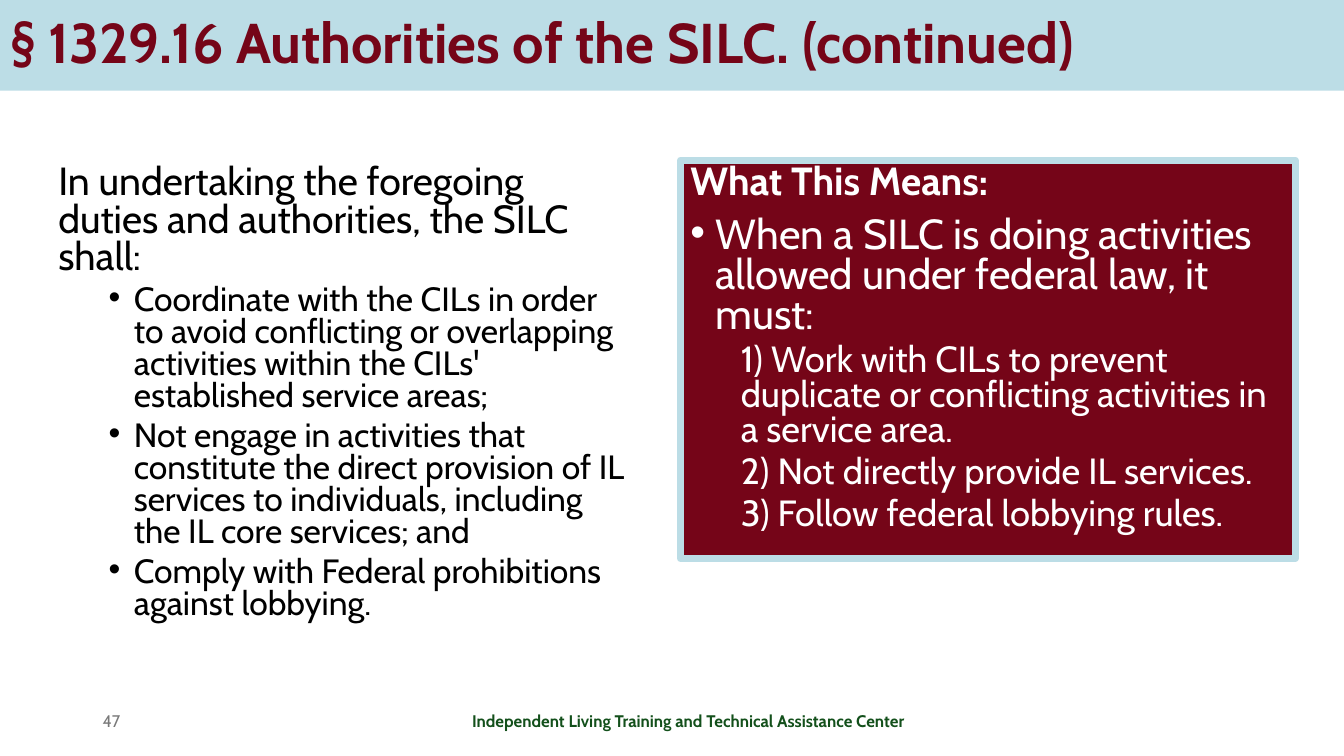
from dataclasses import dataclass

from lxml.etree import SubElement
from pptx import Presentation
from pptx.dml.color import RGBColor
from pptx.enum.shapes import MSO_SHAPE
from pptx.enum.text import MSO_ANCHOR, MSO_AUTO_SIZE, PP_ALIGN
from pptx.oxml.ns import qn
from pptx.util import Emu, Inches, Pt

FONT = "Cabin"
MAROON, SKY, GREEN = "750518", "BCDDE6", "13501B"
BLACK, WHITE, GRAY = "000000", "FFFFFF", "797979"


@dataclass
class Area:
    """Position and size in percent of the slide."""
    left: float
    top: float
    width: float
    height: float


@dataclass
class Para:
    text: str
    size: float
    color: str
    bold: bool = False
    level: int = 0
    margin: float = 0
    bullet: bool = False
    before: float = 0
    spacing: float = 1.0
    align: PP_ALIGN = PP_ALIGN.LEFT


@dataclass
class Block:
    area: Area
    paras: list[Para]
    anchor: MSO_ANCHOR = MSO_ANCHOR.TOP
    fill: str | None = None
    line: str | None = None


def rgb(value: str) -> RGBColor:
    return RGBColor.from_string(value)


def intro(text: str, color: str, bold: bool = False) -> Para:
    return Para(text, 28, color, bold, spacing=0.8)


def duty(text: str) -> Para:
    return Para(text, 24, BLACK, level=1, margin=0.75, bullet=True, before=5, spacing=0.8)


def step(text: str) -> Para:
    return Para(text, 26, WHITE, level=1, margin=0.5, before=5, spacing=0.8)


def place(area: Area) -> list[Emu]:
    w, h = prs.slide_width, prs.slide_height
    shares = (area.left, w), (area.top, h), (area.width, w), (area.height, h)
    return [Emu(round(share * full / 100)) for share, full in shares]


def write(sp, block: Block) -> None:
    tf = sp.text_frame
    frame_format = {"word_wrap": True, "auto_size": MSO_AUTO_SIZE.NONE,
                    "vertical_anchor": block.anchor}
    for name, value in frame_format.items():
        setattr(tf, name, value)
    for i, para in enumerate(block.paras):
        p = tf.add_paragraph() if i else tf.paragraphs[0]
        p_format = {"level": para.level, "alignment": para.align,
                    "line_spacing": para.spacing, "space_before": Pt(para.before)}
        for name, value in p_format.items():
            setattr(p, name, value)
        pPr = p._p.get_or_add_pPr()
        pPr.set("marL", str(Inches(para.margin)))
        pPr.set("indent", str(Inches(-0.25 if para.bullet else 0)))
        if para.bullet:
            SubElement(pPr, qn("a:buFont")).set("typeface", "Arial")
            SubElement(pPr, qn("a:buChar")).set("char", "•")
        r = p.add_run()
        r.text = para.text
        font_format = {"name": FONT, "size": Pt(para.size), "bold": para.bold}
        for name, value in font_format.items():
            setattr(r.font, name, value)
        r.font.color.rgb = rgb(para.color)


def add_block(block: Block) -> None:
    if block.fill:
        sp = s.shapes.add_shape(MSO_SHAPE.RECTANGLE, *place(block.area))
        sp.shadow.inherit = False
        sp.fill.solid()
        sp.fill.fore_color.rgb = rgb(block.fill)
        sp.line.color.rgb = rgb(block.line)
        sp.line.width = Pt(5)
        SubElement(sp.line._get_or_add_ln(), qn("a:round"))
    else:
        sp = s.shapes.add_textbox(*place(block.area))
    write(sp, block)


prs = Presentation()
prs.slide_width, prs.slide_height = Inches(13.33), Inches(7.5)
s = prs.slides.add_slide(prs.slide_layouts[5])

# Title band
title = Block(Area(0, 0, 100, 12),
              [Para("§ 1329.16 Authorities of the SILC. (continued)", 40, MAROON, True, spacing=0.9)],
              MSO_ANCHOR.MIDDLE)
band = s.shapes.title
band.left, band.top, band.width, band.height = place(title.area)
band.fill.solid()
band.fill.fore_color.rgb = rgb(SKY)
write(band, title)

# Regulation, plain-language panel, and footer
TOP, FOOT, FOOT_HEIGHT = 21.2, 92.67, 5.33
blocks = [
    Block(Area(3.6, TOP, 44.03, 66.8), [
        intro("In undertaking the foregoing duties and authorities, the SILC shall:", BLACK),
        duty("Coordinate with the CILs in order to avoid conflicting or overlapping "
             "activities within the CILs' established service areas;"),
        duty("Not engage in activities that constitute the direct provision of IL "
             "services to individuals, including the IL core services; and"),
        duty("Comply with Federal prohibitions against lobbying."),
    ]),
    Block(Area(50.63, TOP, 45.75, 52.67), [
        intro("What This Means:", WHITE, True),
        Para("When a SILC is doing activities allowed under federal law, it must:", 30, WHITE,
             margin=0.25, bullet=True, before=10, spacing=0.8),
        step("1) Work with CILs to prevent duplicate or conflicting activities in a service area."),
        step("2) Not directly provide IL services."),
        step("3) Follow federal lobbying rules."),
    ], fill=MAROON, line=SKY),
    Block(Area(6.9, FOOT, 22.5, FOOT_HEIGHT), [Para("47", 12, GRAY)], MSO_ANCHOR.MIDDLE),
    Block(Area(33.15, FOOT, 36.15, FOOT_HEIGHT),
          [Para("Independent Living Training and Technical Assistance Center", 12, GREEN, True,
                align=PP_ALIGN.CENTER)], MSO_ANCHOR.MIDDLE),
]
for block in blocks:
    add_block(block)

prs.save("out.pptx")
